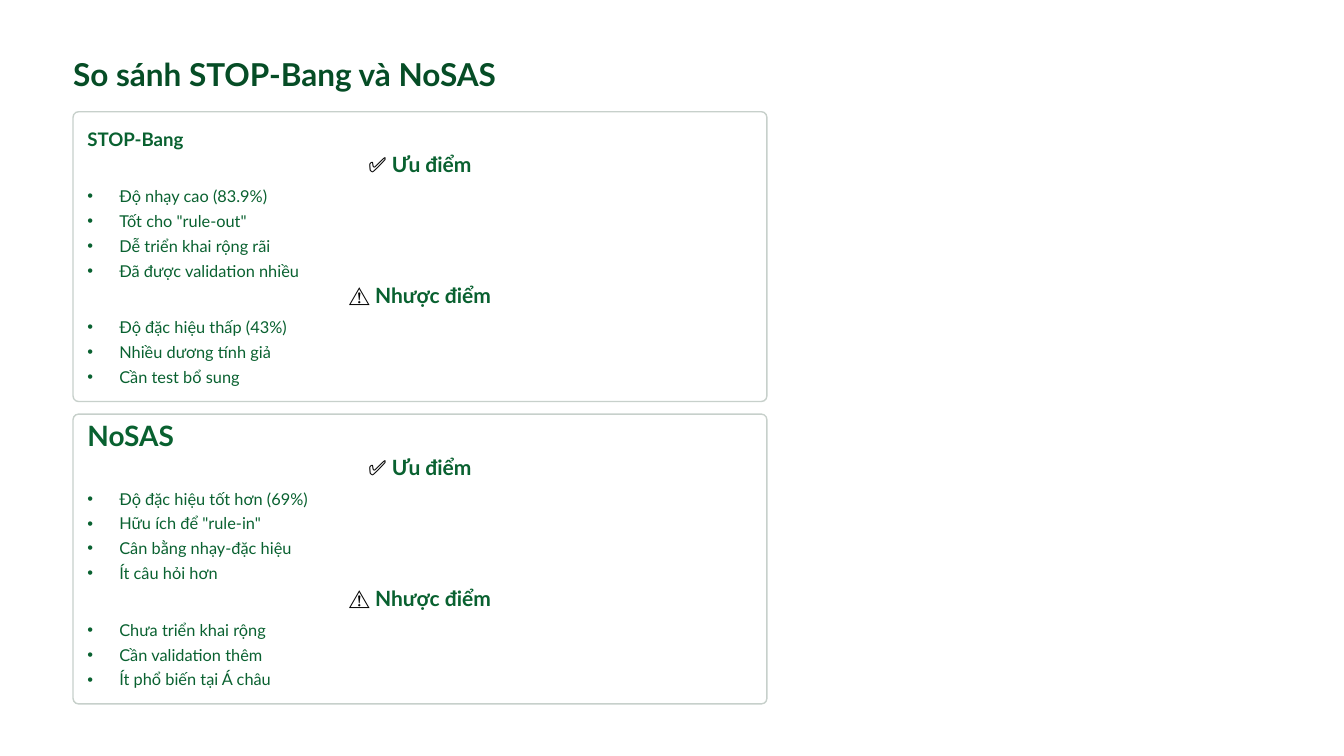
import dataclasses
import pptx
import pptx.util
import pptx.dml.color
import pptx.enum.shapes
import pptx.enum.text
import pptx.oxml.ns
import lxml.etree


@dataclasses.dataclass(frozen=True)
class Theme:
    font: str = "Lato"
    title: str = "064D26"
    text: str = "096130"
    icon: str = "000000"
    card: str = "FFFFFF"
    border: str = "C7D0CB"
    title_size: int = 27
    section_size: int = 18
    item_size: int = 14


theme = Theme()
inch = pptx.util.Inches
pt = pptx.util.Pt
rgb = pptx.dml.color.RGBColor.from_string
align = pptx.enum.text.PP_ALIGN


def place(sp, left, top, width, height):
    sp.left, sp.top, sp.width, sp.height = inch(left), inch(top), inch(width), inch(height)
    tf = sp.text_frame
    tf.margin_left = tf.margin_right = tf.margin_top = tf.margin_bottom = 0
    tf.word_wrap = True
    tf.auto_size = pptx.enum.text.MSO_AUTO_SIZE.NONE
    tf.vertical_anchor = pptx.enum.text.MSO_ANCHOR.TOP
    return tf


def style(p, size, color, line, bold=True, alignment=align.LEFT):
    p.alignment = alignment
    p.line_spacing = pt(line)
    p.space_before = pt(0)
    for r in p.runs:
        r.font.name = theme.font
        r.font.size = pt(size)
        r.font.bold = bold
        r.font.color.rgb = rgb(color)


cards = [
    ("STOP-Bang", 16, [
        ("✅", "Ưu điểm", ["Độ nhạy cao (83.9%)", 'Tốt cho "rule-out"',
                          "Dễ triển khai rộng rãi", "Đã được validation nhiều"]),
        ("⚠️", "Nhược điểm", ["Độ đặc hiệu thấp (43%)", "Nhiều dương tính giả",
                             "Cần test bổ sung"]),
    ]),
    ("NoSAS", 24, [
        ("✅", "Ưu điểm", ["Độ đặc hiệu tốt hơn (69%)", 'Hữu ích để "rule-in"',
                          "Cân bằng nhạy-đặc hiệu", "Ít câu hỏi hơn"]),
        ("⚠️", "Nhược điểm", ["Chưa triển khai rộng", "Cần validation thêm",
                             "Ít phổ biến tại Á châu"]),
    ]),
]

prs = pptx.Presentation()
prs.slide_width, prs.slide_height = inch(16), inch(9)
s = prs.slides.add_slide(prs.slide_layouts.get_by_name("Comparison"))
s.background.fill.solid()
s.background.fill.fore_color.rgb = rgb(theme.card)

left, top, width, height = 0.87, 1.33, 8.26, 3.45
card_pitch, section_pitch = 3.6, 1.56
pad = 0.17
inner_left, inner_width = left + pad, width - 2 * pad
section_width = 1.9

tf = place(s.shapes.title, left, 0.63, 5.77, 0.47)
tf.text = "So sánh STOP-Bang và NoSAS"
style(tf.paragraphs[0], theme.title_size, theme.title, 34)

for row, (name, name_size, sections) in enumerate(cards):
    card_top = top + row * card_pitch
    card = s.shapes.add_shape(pptx.enum.shapes.MSO_SHAPE.ROUNDED_RECTANGLE,
                              inch(left), inch(card_top), inch(width), inch(height))
    card.adjustments[0] = 0.019
    card.shadow.inherit = False
    card.fill.solid()
    card.fill.fore_color.rgb = rgb(theme.card)
    card.line.color.rgb = rgb(theme.border)
    card.line.width = pt(1.2)
    card.element.getparent().insert(2 + row, card.element)

    tf = place(s.shapes.add_textbox(0, 0, 0, 0), inner_left, card_top + pad, 2.28, 0.28)
    tf.text = name
    style(tf.paragraphs[0], name_size, theme.text, 20.5)

    for i, (icon, heading, items) in enumerate(sections):
        section_top = card_top + 0.54 + i * section_pitch
        tf = place(s.shapes.add_textbox(0, 0, 0, 0),
                   left + (width - section_width) / 2, section_top, section_width, 0.25)
        tf.text = icon
        p = tf.paragraphs[0]
        p.add_run().text = " " + heading
        style(p, theme.section_size, theme.text, 17, alignment=align.CENTER)
        p.runs[0].font.color.rgb = rgb(theme.icon)

        tf = place(s.placeholders[1 + 2 * row + i], inner_left, section_top + 0.34,
                   inner_width, 0.3 * len(items))
        tf.text = "\n".join(items)
        for p in tf.paragraphs:
            style(p, theme.item_size, theme.text, 17.5, bold=False)
            p.space_after = pt(3.8)
            pPr = p._p.get_or_add_pPr()
            pPr.set("marL", str(inch(0.38)))
            pPr.set("indent", str(-inch(0.38)))
            bullet = lxml.etree.SubElement(pPr, pptx.oxml.ns.qn("a:buChar"))
            bullet.set("char", "•")

prs.save("out.pptx")
